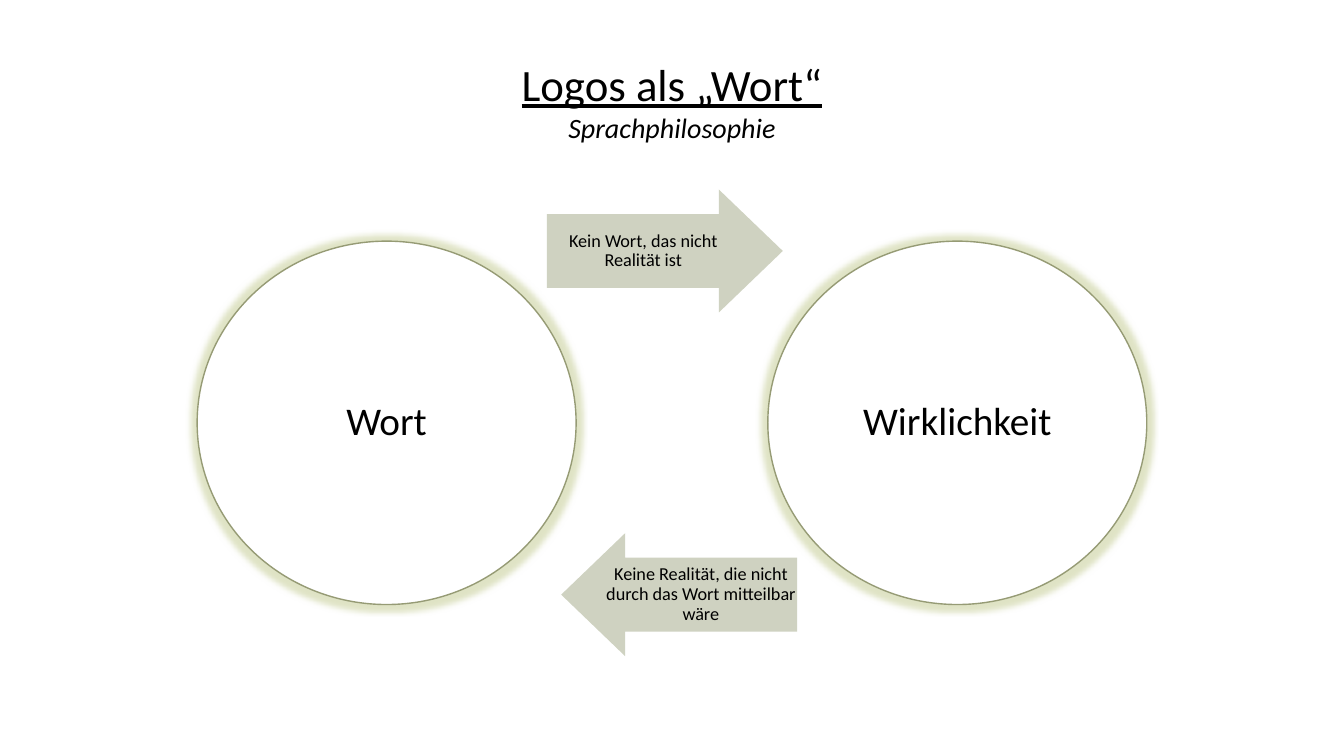
from lxml.etree import SubElement
from pptx import Presentation
from pptx.dml.color import RGBColor
from pptx.enum.shapes import MSO_SHAPE
from pptx.enum.text import MSO_ANCHOR, MSO_AUTO_SIZE, PP_ALIGN
from pptx.oxml.ns import qn
from pptx.util import Inches, Pt

SLIDE_WIDTH, SLIDE_HEIGHT = Inches(13.333), Inches(7.5)
COLORS = {"text": "000000", "circle": "FFFFFF", "outline": "969B75",
          "arrow": "CFD2C1", "glow": "B1BB70"}

# Percent of the slide's width and height
MIDDLE_X, MIDDLE_Y = 50, 55.93
CIRCLE_SIZE = (28.2, 48.07)
ARROW_SIZE = (17.55, 16.27)
CIRCLE_OFFSET = 21.23
ARROW_OFFSET_X, ARROW_OFFSET_Y = 0.53, 22.73


def box_around(center_x, center_y, size):
    """Turn a center and a size in percent into left, top, width, height."""
    width, height = size
    return (int(SLIDE_WIDTH * (center_x - width / 2) / 100),
            int(SLIDE_HEIGHT * (center_y - height / 2) / 100),
            int(SLIDE_WIDTH * width / 100),
            int(SLIDE_HEIGHT * height / 100))


def write(paragraph, text, size, underline=False, italic=False, spacing=1.0):
    paragraph.alignment = PP_ALIGN.CENTER
    paragraph.line_spacing = spacing
    run = paragraph.add_run()
    run.text = text
    font = run.font
    font.name, font.size = "Calibri", Pt(size)
    font.underline, font.italic = underline, italic
    font.color.rgb = RGBColor.from_string(COLORS["text"])


def add_title(slide, heading, subheading):
    title = slide.shapes.title
    title.left, title.top, title.width, title.height = box_around(
        MIDDLE_X, 13.33, (34.58, 13.07))
    frame = title.text_frame
    frame.auto_size = MSO_AUTO_SIZE.NONE
    frame.vertical_anchor = MSO_ANCHOR.TOP
    write(frame.paragraphs[0], heading, 32, underline=True)
    write(frame.add_paragraph(), subheading, 20, italic=True)


def add_labelled_shape(slide, kind, box, fill, text, size):
    shape = slide.shapes.add_shape(kind, *box)
    shape.shadow.inherit = False
    shape.fill.solid()
    shape.fill.fore_color.rgb = RGBColor.from_string(COLORS[fill])
    shape.line.fill.background()
    frame = shape.text_frame
    frame.word_wrap = True
    frame.vertical_anchor = MSO_ANCHOR.MIDDLE
    frame.margin_left = frame.margin_right = 0
    frame.margin_top = frame.margin_bottom = 0
    write(frame.paragraphs[0], text, size, spacing=0.9)
    return shape


def add_glow(shape, radius, alpha):
    effects = shape._element.spPr.find(qn("a:effectLst"))
    glow = SubElement(effects, qn("a:glow"), rad=str(radius))
    color = SubElement(glow, qn("a:srgbClr"), val=COLORS["glow"])
    SubElement(color, qn("a:alpha"), val=str(alpha * 1000))


def add_circle(slide, side, text):
    """Add a circle left (side -1) or right (side 1) of the middle."""
    box = box_around(MIDDLE_X + side * CIRCLE_OFFSET, MIDDLE_Y, CIRCLE_SIZE)
    circle = add_labelled_shape(slide, MSO_SHAPE.OVAL, box, "circle", text, 28)
    circle.line.color.rgb = RGBColor.from_string(COLORS["outline"])
    circle.line.width = Pt(1)
    add_glow(circle, Pt(8), 40)


def add_arrow(slide, side, text):
    """Add the upper arrow (side -1, to the right) or the lower one (side 1)."""
    kind = MSO_SHAPE.RIGHT_ARROW if side < 0 else MSO_SHAPE.LEFT_ARROW
    box = box_around(MIDDLE_X + side * ARROW_OFFSET_X,
                     MIDDLE_Y + side * ARROW_OFFSET_Y, ARROW_SIZE)
    arrow = add_labelled_shape(slide, kind, box, "arrow", text, 13)
    arrow.adjustments[0], arrow.adjustments[1] = 0.6, 0.52
    frame = arrow.text_frame
    if side < 0:
        frame.margin_right = Inches(0.05)
    else:
        frame.margin_left = Inches(0.05)


def main():
    presentation = Presentation()
    presentation.slide_width = SLIDE_WIDTH
    presentation.slide_height = SLIDE_HEIGHT
    slide = presentation.slides.add_slide(presentation.slide_layouts[5])
    add_title(slide, "Logos als „Wort“", "Sprachphilosophie")
    content = [
        (-1, "Wort", "Kein Wort, das nicht Realität ist"),
        (1, "Wirklichkeit",
         "Keine Realität, die nicht durch das Wort mitteilbar wäre"),
    ]
    for side, concept, relation in content:
        add_circle(slide, side, concept)
        add_arrow(slide, side, relation)
    presentation.save("out.pptx")


if __name__ == "__main__":
    main()
